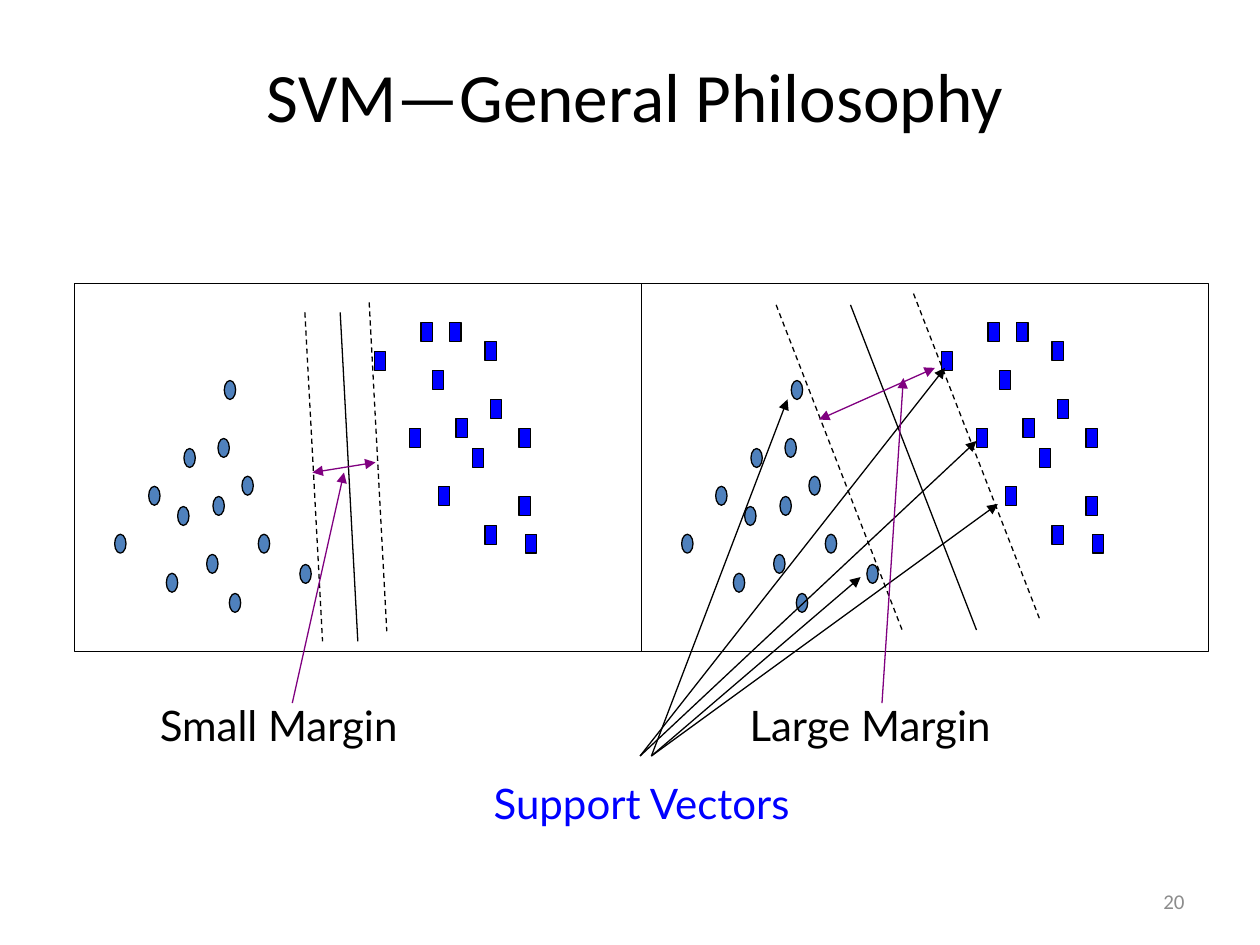
from pptx import Presentation
from pptx import util as u
from pptx.dml.color import RGBColor
from pptx.enum import dml, shapes, text
from pptx.oxml import parse_xml
from pptx.oxml.ns import nsdecls

BLACK = RGBColor(0, 0, 0)
BLUE = RGBColor(0, 0, 255)
STEEL = RGBColor(0x4F, 0x81, 0xBD)
PURPLE = RGBColor(0x80, 0, 0x80)
GRAY = RGBColor(0x8C, 0x8C, 0x8C)

TITLE = "SVM—General Philosophy"

# Both panels show the same data, one panel width apart
LEFT, TOP, WIDE, HIGH = 0.59, 2.25, 4.5, 2.92
DOT = (0.09, 0.15)
CIRCLES = [
    (1.32, 4.55), (1.41, 4.02), (0.91, 4.24), (1.18, 3.86), (1.64, 4.4),
    (1.46, 3.56), (1.69, 3.94), (1.73, 3.48), (1.92, 3.78), (2.05, 4.24),
    (1.82, 4.71), (2.38, 4.48), (1.78, 3.02),
]
SQUARES = [
    (3.25, 3.4), (2.97, 2.79), (3.34, 2.56), (3.48, 3.86), (3.43, 2.94),
    (3.62, 3.32), (3.57, 2.56), (3.85, 2.71), (3.75, 3.56), (3.89, 3.17),
    (3.85, 4.17), (4.12, 3.4), (4.12, 3.94), (4.17, 4.24),
]

# Start, run and rise shared by each panel's three lines: start points, step, dashed
BOUNDS = [
    ([(2.93, 2.4, True), (2.42, 2.48, True), (2.7, 2.48, False)], (0.14, 2.61)),
    ([(6.16, 2.42, True), (7.25, 2.33, True), (6.75, 2.42, False)], (1, 2.58)),
]

# Support vector arrows: start x, tip
FOOT = 6
VECTORS = [
    (5.08, (7.5, 2.92)), (5.08, (7.75, 3.5)), (5.17, (7.92, 4)),
    (5.17, (6.83, 4.58)), (5.17, (6.25, 3.17)),
]

# Margin arrows: start, end, heads at both ends
MARGINS = [
    ((2.48, 3.75), (2.98, 3.67), True), ((2.32, 5.58), (2.73, 3.75), False),
    ((6.5, 3.33), (7.42, 2.92), True), ((7, 5.58), (7.17, 3), False),
]

LABELS = [
    ("Support Vectors", (3.82, 6.12, 2.55, 0.5), BLUE),
    ("Small Margin", (1.17, 5.5, 2.1, 0.5), BLACK),
    ("Large Margin", (5.85, 5.5, 2.12, 0.5), BLACK),
]


def inches(*nums):
    return [u.Inches(n) for n in nums]


def style(frame, font, size, color, align):
    frame.vertical_anchor = text.MSO_ANCHOR.MIDDLE
    para = frame.paragraphs[0]
    para.alignment = align
    run = para.runs[0].font
    run.name, run.size = font, u.Pt(size)
    run.color.rgb = color


def label(slide, words, box, font, size, color, align):
    frame = slide.shapes.add_textbox(*inches(*box)).text_frame
    frame.text = words
    frame.word_wrap = False
    style(frame, font, size, color, align)


def mark(slide, kind, box, fill=None):
    shape = slide.shapes.add_shape(kind, *inches(*box))
    shape.shadow.inherit = False
    if fill is None:
        shape.fill.background()
    else:
        shape.fill.solid()
        shape.fill.fore_color.rgb = fill
    shape.line.color.rgb = BLACK
    shape.line.width = u.Pt(0.75)


def line(slide, start, end, color=BLACK, dash=False, ends=()):
    wire = slide.shapes.add_connector(
        shapes.MSO_CONNECTOR.STRAIGHT, *inches(*start, *end))
    wire.line.color.rgb = color
    wire.line.width = u.Pt(0.75)
    if dash:
        wire.line.dash_style = dml.MSO_LINE.DASH
    for tag in ends:
        wire.line._get_or_add_ln().append(
            parse_xml(f'<a:{tag} {nsdecls("a")} type="triangle"/>'))
    wire._element.spPr.append(parse_xml(f'<a:effectLst {nsdecls("a")}/>'))


def main():
    deck = Presentation()
    deck.slide_width, deck.slide_height = inches(10, 7.5)
    slide = deck.slides.add_slide(deck.slide_layouts[5])

    # Title and page number
    title = slide.shapes.title
    title.left, title.top, title.width, title.height = inches(0.33, 0.42, 9.42, 0.67)
    title.text_frame.text = TITLE
    style(title.text_frame, "Calibri", 39.6, BLACK, text.PP_ALIGN.CENTER)
    label(slide, "20", (7.17, 6.95, 2.33, 0.4), "Calibri", 12, GRAY,
          text.PP_ALIGN.RIGHT)

    # Panels with data points and boundaries
    kinds = [(shapes.MSO_SHAPE.OVAL, CIRCLES, STEEL),
             (shapes.MSO_SHAPE.RECTANGLE, SQUARES, BLUE)]
    for col, (starts, (run, rise)) in enumerate(BOUNDS):
        shift = col * WIDE
        for kind, spots, fill in kinds:
            for x, y in spots:
                mark(slide, kind, (x + shift, y, *DOT), fill)
        mark(slide, shapes.MSO_SHAPE.RECTANGLE, (LEFT + shift, TOP, WIDE, HIGH))
        for x, y, dash in starts:
            line(slide, (x, y), (x + run, y + rise), dash=dash)

    # Arrows and labels
    for x, tip in VECTORS:
        line(slide, (x, FOOT), tip, ends=["tailEnd"])
    for start, end, both in MARGINS:
        ends = ["headEnd", "tailEnd"] if both else ["tailEnd"]
        line(slide, start, end, PURPLE, ends=ends)
    for words, box, color in LABELS:
        label(slide, words, box, "Lato", 24, color, text.PP_ALIGN.LEFT)

    deck.save("out.pptx")


if __name__ == "__main__":
    main()
